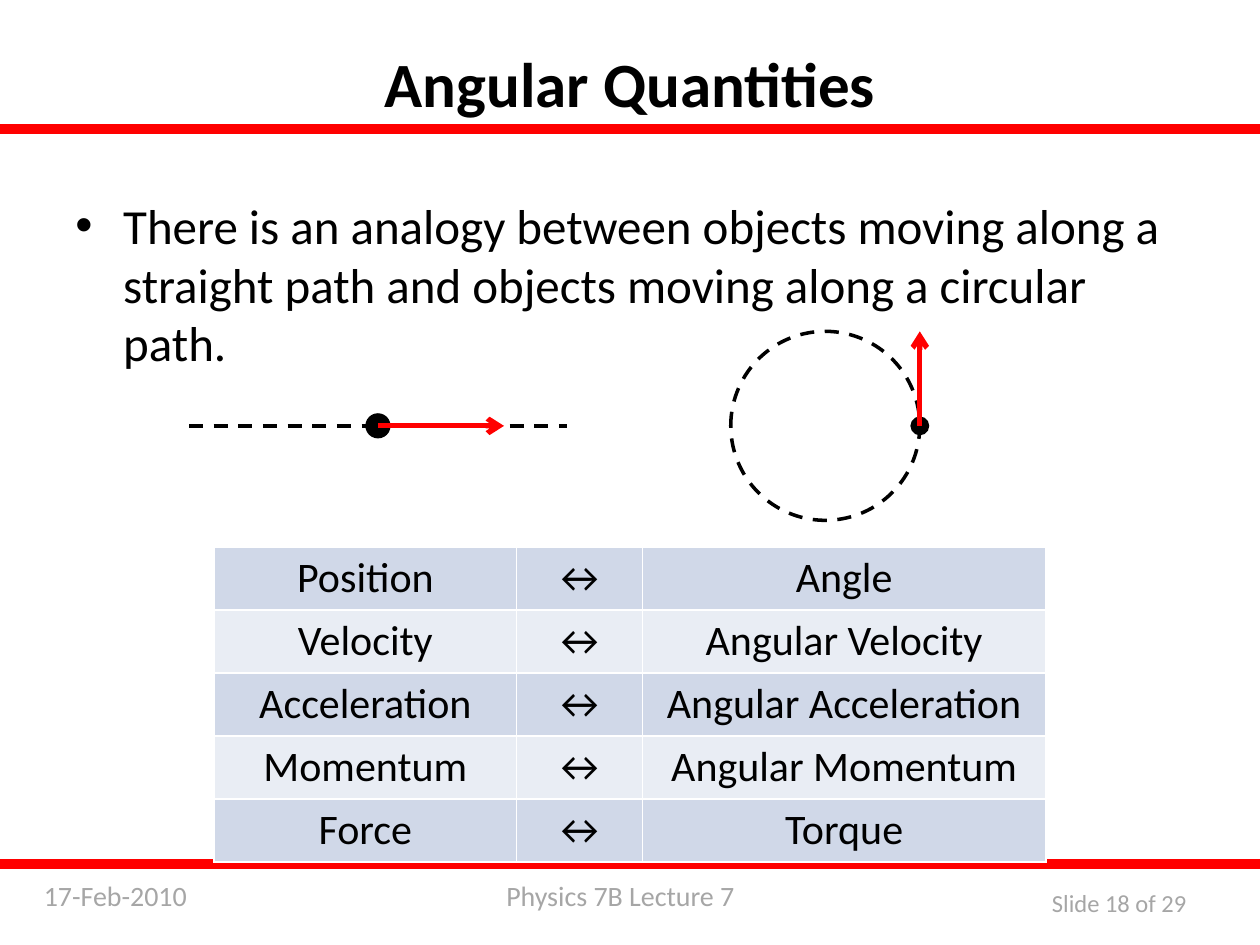
from lxml.etree import SubElement
from pptx import Presentation
from pptx.dml.color import RGBColor
from pptx.enum.dml import MSO_LINE
from pptx.enum.shapes import MSO_CONNECTOR, MSO_SHAPE
from pptx.enum.text import MSO_ANCHOR, MSO_AUTO_SIZE, PP_ALIGN
from pptx.oxml.ns import qn
from pptx.util import Inches, Pt

FONT = "Calibri"
BLACK = RGBColor(0x00, 0x00, 0x00)
RED = RGBColor(0xFF, 0x00, 0x00)
GRAY = RGBColor(0xA6, 0xA6, 0xA6)
BAND_COLORS = (RGBColor(0xD0, 0xD8, 0xE8), RGBColor(0xE9, 0xED, 0xF4))

TITLE = "Angular Quantities"
BODY = (
    "There is an analogy between objects moving along a straight path "
    "and objects moving along a circular path."
)
FOOTERS = [
    ("Physics 7B Lecture 7", (3.92, 6.92, 2.04, 0.37), 16),
    ("17-Feb-2010", (0.25, 6.92, 1.67, 0.37), 16),
    ("Slide 18 of 29", (8.25, 7, 1.31, 0.34), 14),
]
RULE_TOPS = (1, 6.83)
ANALOGIES = [
    ("Position", "Angle"),
    ("Velocity", "Angular Velocity"),
    ("Acceleration", "Angular Acceleration"),
    ("Momentum", "Angular Momentum"),
    ("Force", "Torque"),
]
COLUMN_WIDTHS = (2.4, 1, 3.2)
ROW_HEIGHT = 0.5
MOTION_Y = 3.38


def inches(values):
    return [Inches(value) for value in values]


def format_text(paragraph, size, color=BLACK, bold=False):
    for run in paragraph.runs:
        run.font.name = FONT
        run.font.size = Pt(size)
        run.font.bold = bold
        run.font.color.rgb = color


def add_text(slide, text, box, size, color=BLACK, wrap=True):
    text_frame = slide.shapes.add_textbox(*inches(box)).text_frame
    text_frame.word_wrap = wrap
    text_frame.text = text
    format_text(text_frame.paragraphs[0], size, color)
    return text_frame.paragraphs[0]


def add_preset(shapes, kind, box, fill=None, line=None, dashed=False):
    shape = shapes.add_shape(kind, *inches(box))
    shape.shadow.inherit = False
    if fill is None:
        shape.fill.background()
    else:
        shape.fill.solid()
        shape.fill.fore_color.rgb = fill
    if line is None:
        shape.line.fill.background()
    else:
        shape.line.color.rgb = line
        shape.line.width = Pt(2)
    if dashed:
        shape.line.dash_style = MSO_LINE.DASH


def add_dot(shapes, x, y, diameter):
    box = (x - diameter / 2, y - diameter / 2, diameter, diameter)
    add_preset(shapes, MSO_SHAPE.OVAL, box, fill=BLACK)


def add_line(shapes, start, end, color, width):
    connector = shapes.add_connector(MSO_CONNECTOR.STRAIGHT, *inches(start + end))
    connector.line.color.rgb = color
    connector.line.width = Pt(width)
    SubElement(connector._element.spPr, qn("a:effectLst"))
    return connector


def add_velocity(shapes, start, end):
    connector = add_line(shapes, start, end, RED, 3)
    SubElement(connector.line._get_or_add_ln(), qn("a:tailEnd"), type="arrow")


def add_title(slide):
    title = slide.shapes.title
    title.left, title.top, title.width, title.height = inches((0.5, 0.3, 9, 1.25))
    text_frame = title.text_frame
    text_frame.text = TITLE
    text_frame.auto_size = MSO_AUTO_SIZE.NONE
    text_frame.vertical_anchor = MSO_ANCHOR.TOP
    text_frame.paragraphs[0].alignment = PP_ALIGN.CENTER
    format_text(text_frame.paragraphs[0], 36, bold=True)


def add_body(slide):
    paragraph = add_text(slide, BODY, (0.5, 1.5, 9, 2.75), 28)
    properties = paragraph._p.get_or_add_pPr()
    properties.set("marL", str(Inches(0.38)))
    properties.set("indent", str(Inches(-0.38)))
    SubElement(properties, qn("a:buFont"), typeface="Arial")
    SubElement(properties, qn("a:buChar"), char="•")


def add_straight_motion(slide):
    shapes = slide.shapes.add_group_shape().shapes
    track = add_line(shapes, (1.5, MOTION_Y), (4.5, MOTION_Y), BLACK, 2)
    track.line.dash_style = MSO_LINE.DASH
    add_dot(shapes, 3, MOTION_Y, 0.2)
    add_velocity(shapes, (3, MOTION_Y), (4, MOTION_Y))


def add_circular_motion(slide):
    shapes = slide.shapes.add_group_shape().shapes
    left, diameter = 5.8, 1.5
    right, top = left + diameter, MOTION_Y - diameter / 2
    circle = (left, top, diameter, diameter)
    add_preset(shapes, MSO_SHAPE.OVAL, circle, line=BLACK, dashed=True)
    add_dot(shapes, right, MOTION_Y, 0.15)
    add_velocity(shapes, (right, MOTION_Y), (right, top))


def add_cell_borders(cell):
    properties = cell._tc.get_or_add_tcPr()
    for index, side in enumerate(("lnL", "lnR", "lnT", "lnB")):
        border = properties.makeelement(qn(f"a:{side}"), {"w": str(Pt(1))})
        fill = SubElement(border, qn("a:solidFill"))
        SubElement(fill, qn("a:srgbClr"), val="FFFFFF")
        properties.insert(index, border)


def add_analogy_table(slide):
    box = (1.7, 4.34, sum(COLUMN_WIDTHS), ROW_HEIGHT * len(ANALOGIES))
    frame = slide.shapes.add_table(len(ANALOGIES), len(COLUMN_WIDTHS), *inches(box))
    table = frame.table
    table.first_row = False
    for column, width in zip(table.columns, COLUMN_WIDTHS):
        column.width = Inches(width)
    for row_index, (linear, angular) in enumerate(ANALOGIES):
        table.rows[row_index].height = Inches(ROW_HEIGHT)
        for column_index, text in enumerate((linear, "↔", angular)):
            cell = table.cell(row_index, column_index)
            cell.text = text
            cell.vertical_anchor = MSO_ANCHOR.MIDDLE
            cell.margin_top = cell.margin_bottom = Inches(0.04)
            cell.fill.solid()
            cell.fill.fore_color.rgb = BAND_COLORS[row_index % 2]
            paragraph = cell.text_frame.paragraphs[0]
            paragraph.alignment = PP_ALIGN.CENTER
            format_text(paragraph, 24)
            add_cell_borders(cell)


def main():
    presentation = Presentation()
    presentation.slide_width = Inches(10)
    presentation.slide_height = Inches(7.5)
    slide = presentation.slides.add_slide(presentation.slide_layouts[5])
    for text, box, size in FOOTERS:
        add_text(slide, text, box, size, GRAY, wrap=False)
    for top in RULE_TOPS:
        add_preset(slide.shapes, MSO_SHAPE.RECTANGLE, (0, top, 10, 0.05), RED, RED)
    add_title(slide)
    add_body(slide)
    add_straight_motion(slide)
    add_circular_motion(slide)
    add_analogy_table(slide)
    presentation.save("out.pptx")


if __name__ == "__main__":
    main()
